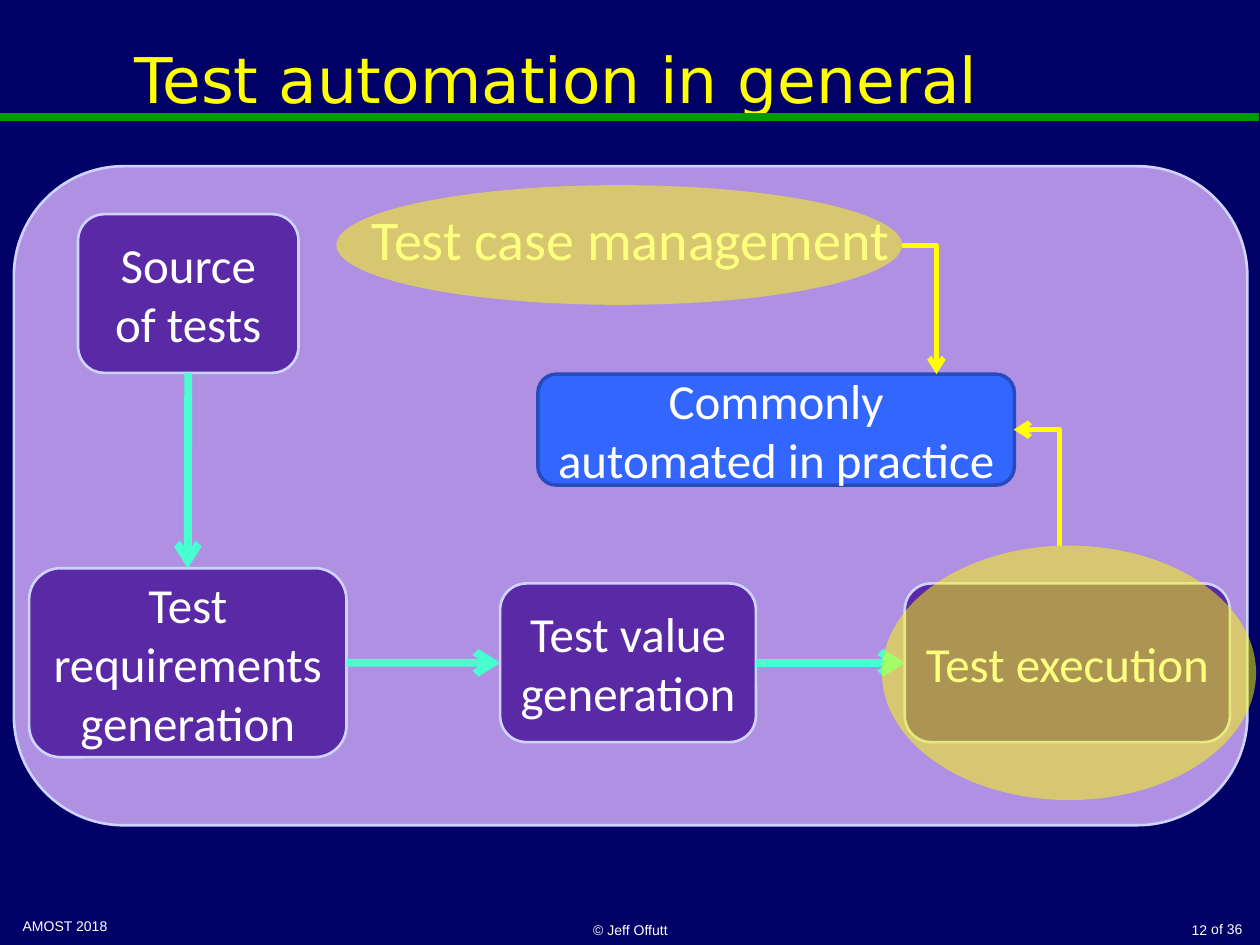
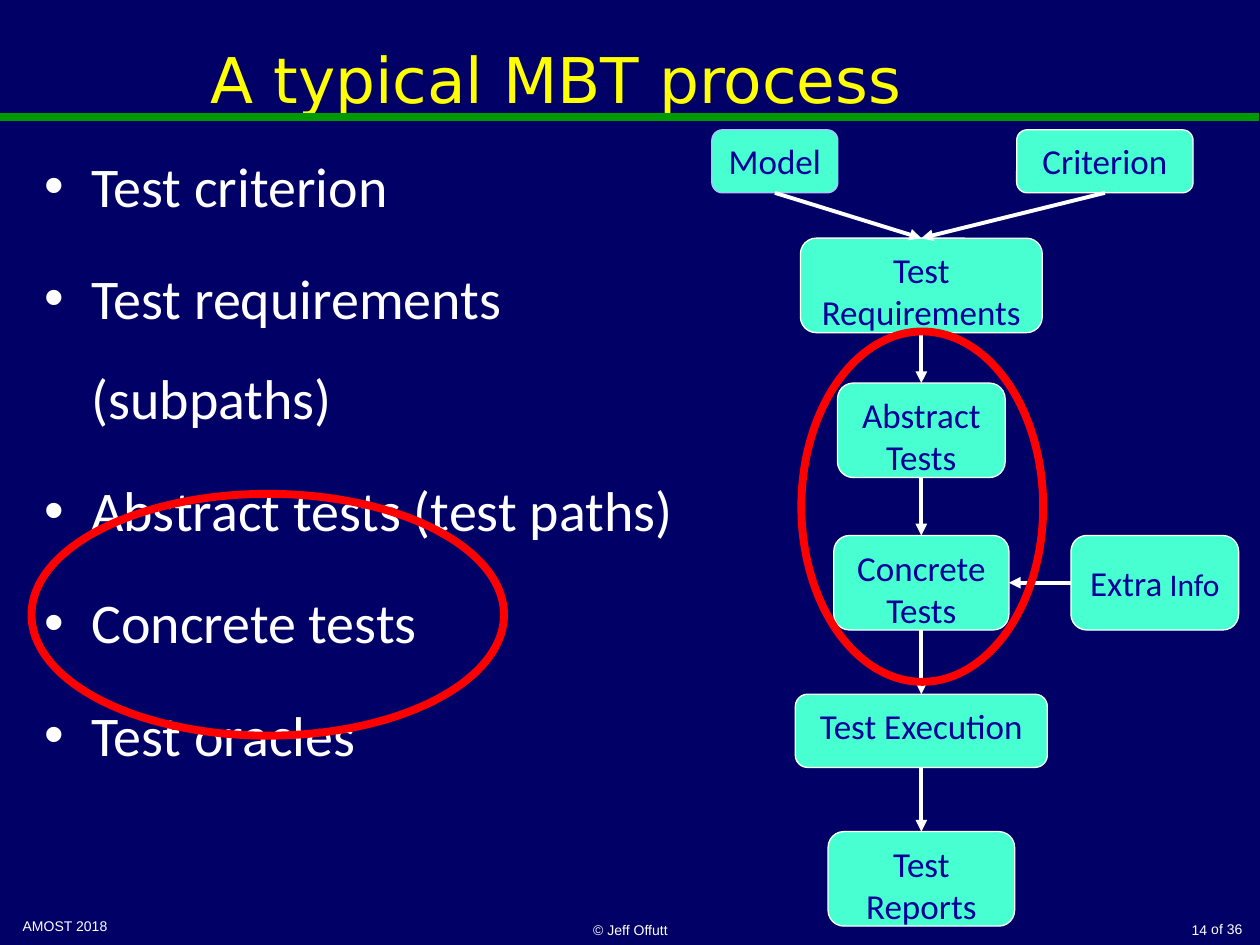
from lxml import etree
from pptx import Presentation
from pptx.dml.color import RGBColor
from pptx.enum.shapes import MSO_CONNECTOR as LINK, MSO_SHAPE as SHAPE
from pptx.enum.text import MSO_ANCHOR as ANCHOR, MSO_AUTO_SIZE as FIT, PP_ALIGN as ALIGN
from pptx.oxml.ns import qn
from pptx.util import Pt

NAVY = RGBColor(0x00, 0x00, 0x66)
GREEN = RGBColor(0x00, 0x99, 0x00)
YELLOW = RGBColor(0xFF, 0xFF, 0x00)
WHITE = RGBColor(0xFF, 0xFF, 0xFF)
RED = RGBColor(0xFF, 0x00, 0x00)
LILAC = RGBColor(0xB0, 0x90, 0xE3)
PALE = RGBColor(0xCE, 0xD4, 0xFF)
PURPLE = RGBColor(0x5A, 0x2A, 0xA6)
BLUE = RGBColor(0x33, 0x66, 0xFF)
DARK_BLUE = RGBColor(0x26, 0x4B, 0xBD)
AQUA = RGBColor(0x47, 0xFF, 0xD1)
PALE_BLUE = RGBColor(0xAD, 0xC2, 0xFF)
INK = RGBColor(0x00, 0x00, 0x99)

TITLE = {"name": "DejaVu Sans", "size": Pt(36), "color": YELLOW}
LIST = {"name": "Calibri", "size": Pt(32), "color": WHITE}
STEP = {**LIST, "size": Pt(28)}
FLOW = {"name": "Calibri", "size": Pt(20), "color": INK}
SMALL = {"name": "Arial", "size": Pt(8), "color": WHITE}

TOP, LEFT, BOTTOM, RIGHT = range(4)  # connection sites of a rectangle
TITLE_BOX = (5.8, 0, 624.2, 90)
PANEL_BOX = (7.9, 95, 704.9, 376.6)
LIST_BOX = (18, 71.3, 419, 363)
FLOW_BOX = (406.8, 74.2, 301, 455)


def style(font, fmt):
    for name, value in fmt.items():
        if name == "color":
            font.color.rgb = value
        else:
            setattr(font, name, value)


def write(p, text, fmt, align=None):
    r = p.add_run()
    r.text = text
    style(r.font, fmt)
    if align is not None:
        p.alignment = align


def place(sp, x, y, w, h):
    for name, value in zip(("left", "top", "width", "height"), (x, y, w, h)):
        setattr(sp, name, Pt(value))


def add_shape(s, kind, box, fill=None, line=None, weight=0.75):
    sp = s.shapes.add_shape(kind, *map(Pt, box))
    sp.shadow.inherit = False
    for part, color in ((sp.fill, fill), (sp.line.fill, line)):
        if color is None:
            part.background()
        else:
            part.solid()
            part.fore_color.rgb = color
    if line is not None:
        sp.line.width = Pt(weight)
    return sp


def add_node(s, box, text, fmt, fill, line, weight=0.75, anchor=ANCHOR.MIDDLE):
    sp = add_shape(s, SHAPE.ROUNDED_RECTANGLE, box, fill, line, weight)
    tf = sp.text_frame
    tf.word_wrap, tf.vertical_anchor = True, anchor
    write(tf.paragraphs[0], text, fmt, ALIGN.CENTER)
    return sp


def add_highlight(s, box):
    """Half-transparent yellow ellipse."""
    sp = add_shape(s, SHAPE.OVAL, box, YELLOW)
    color = sp._element.spPr.find(qn("a:solidFill"))[0]
    etree.SubElement(color, qn("a:alpha"), val="50000")


def add_line(s, start, end, color, weight, kind=LINK.STRAIGHT, **ends):
    """Line with optional arrowheads given as headEnd or tailEnd."""
    c = s.shapes.add_connector(kind, *map(Pt, (*start, *end)))
    c.line.color.rgb = color
    c.line.width = Pt(weight)
    props = c._element.spPr
    for tag, head in ends.items():
        etree.SubElement(props.find(qn("a:ln")), qn(f"a:{tag}"), type=head)
    etree.SubElement(props, qn("a:effectLst"))
    return c


def add_corner(s, start, end, **ends):
    """Arrow that runs across, then turns once."""
    c = add_line(s, start, end, YELLOW, 3, LINK.ELBOW, **ends)
    c._element.spPr.find(qn("a:prstGeom")).set("prst", "bentConnector2")


def join(s, a, site_a, b, site_b, color, weight, head):
    c = add_line(s, (0, 0), (0, 0), color, weight, tailEnd=head)
    c.begin_connect(a, site_a)
    c.end_connect(b, site_b)


def add_small(s, box, text, align, anchor):
    tf = s.shapes.add_textbox(*map(Pt, box)).text_frame
    tf.word_wrap, tf.vertical_anchor = True, anchor
    write(tf.paragraphs[0], text, SMALL, align)


def add_frame(prs, layout, title, number):
    """New slide with title, rule and footers."""
    s = prs.slides.add_slide(prs.slide_layouts[layout])
    add_line(s, (0, 67), (719.3, 67), GREEN, 4.5)
    place(s.shapes.title, *TITLE_BOX)
    tf = s.shapes.title.text_frame
    tf.auto_size, tf.vertical_anchor = FIT.NONE, ANCHOR.MIDDLE
    write(tf.paragraphs[0], title, TITLE, ALIGN.CENTER)
    for box, text, align, anchor in (
        ((5.8, 520.6, 167.8, 18.7), "AMOST 2018", ALIGN.LEFT, ANCHOR.TOP),
        ((246.2, 516.2, 228.2, 23.8), "© Jeff Offutt", ALIGN.CENTER, ANCHOR.BOTTOM),
        ((566.6, 516.2, 130.3, 23.8), str(number), ALIGN.RIGHT, ANCHOR.BOTTOM),
        ((684, 522.7, 33.1, 17.3), "of 36", ALIGN.RIGHT, ANCHOR.TOP),
    ):
        add_small(s, box, text, align, anchor)
    return s


def add_automation(s, box):
    x0, y0 = box[:2]

    def at(x, y, *size):
        return (x0 + x, y0 + y, *size)

    add_node(s, box, "Test case management", LIST, LILAC, PALE, 1.5, ANCHOR.TOP)
    source, needs, values, execution = (
        add_node(s, at(*spot), text, STEP, PURPLE, PALE, 1.5)
        for text, spot in (
            ("Source of tests", (36.7, 27.4, 126, 90.7)),
            ("Test requirements generation", (8.7, 229.7, 181.4, 108)),
            ("Test value generation", (277.9, 238.4, 146.2, 90.7)),
            ("Test execution", (509.1, 238.4, 185.8, 90.7)),
        )
    )
    for a, site_a, b, site_b in (
        (source, BOTTOM, needs, TOP),
        (needs, RIGHT, values, LEFT),
        (values, RIGHT, execution, LEFT),
    ):
        join(s, a, site_a, b, site_b, AQUA, 4.5, "arrow")
    add_highlight(s, at(184.3, 10.8, 323.3, 68.4))
    add_highlight(s, at(496.1, 216.8, 213.8, 145.4))
    add_node(s, at(299.5, 118.8, 272.2, 63.4), "Commonly automated in practice",
             STEP, BLUE, DARK_BLUE, 2)
    add_corner(s, at(571.4, 150.5), at(597.6, 216.8), headEnd="arrow")
    add_corner(s, at(507.6, 45.4), at(527.2, 118.8), tailEnd="arrow")


def add_list(s, box, items):
    body = s.placeholders[1]
    place(body, *box)
    tf = body.text_frame
    tf.auto_size, tf.vertical_anchor = FIT.NONE, ANCHOR.MIDDLE
    for i, item in enumerate(items):
        p = tf.add_paragraph() if i else tf.paragraphs[0]
        props = p._p.get_or_add_pPr()
        props.set("marL", str(Pt(27)))
        props.set("indent", str(Pt(-27)))
        etree.SubElement(props, qn("a:buChar"), char="•")
        p.line_spacing = 1.5
        p.space_before = Pt(6.4 if i else 0)
        write(p, item, LIST)


def add_flow(s, box):
    x0, y0 = box[:2]
    axis = 119.7

    def node(text, center, top, w, h=54, line=WHITE, anchor=ANCHOR.TOP):
        spot = (x0 + center - w / 2, y0 + top, w, h)
        return add_node(s, spot, text, FLOW, AQUA, line, anchor=anchor)

    model = node("Model", 36, 0, 72, 36, PALE_BLUE)
    criterion = node("Criterion", 224.6, 0, 100.8, 36)
    steps = [
        node(text, axis, *spot)
        for text, *spot in (
            ("Test Requirements", 61.9, 138.2),
            ("Abstract Tests", 144.7, 95.8),
            ("Concrete Tests", 231.8, 100.1),
            ("Test Execution", 322.5, 144, 41.8),
            ("Test Reports", 401, 106.6),
        )
    ]
    extra = node("Extra", 253.1, 231.8, 95.8, anchor=ANCHOR.MIDDLE)
    write(extra.text_frame.paragraphs[0], " Info", {**FLOW, "size": Pt(18)})

    links = [(a, BOTTOM, b, TOP) for a, b in zip(steps, steps[1:])]
    links += [(a, BOTTOM, steps[0], TOP) for a in (model, criterion)]
    links.append((extra, LEFT, steps[2], RIGHT))
    for link in links:
        join(s, *link, WHITE, 2.25, "triangle")
    add_shape(s, SHAPE.OVAL, (x0 + 51.1, y0 + 115.2, 138.2, 200.2), line=RED, weight=4.5)


def main():
    prs = Presentation()
    prs.slide_width, prs.slide_height = Pt(720), Pt(540)
    fill = prs.slide_master.background.fill
    fill.solid()
    fill.fore_color.rgb = NAVY

    s = add_frame(prs, 5, "Test automation in general", 12)
    add_automation(s, PANEL_BOX)

    s = add_frame(prs, 1, "A typical MBT process", 14)
    add_list(s, LIST_BOX, (
        "Test criterion", "Test requirements (subpaths)",
        "Abstract tests (test paths)", "Concrete tests", "Test oracles",
    ))
    add_flow(s, FLOW_BOX)
    add_shape(s, SHAPE.OVAL, (18, 282.2, 270, 138.2), line=RED, weight=4.5)
    prs.save("out.pptx")


if __name__ == "__main__":
    main()
